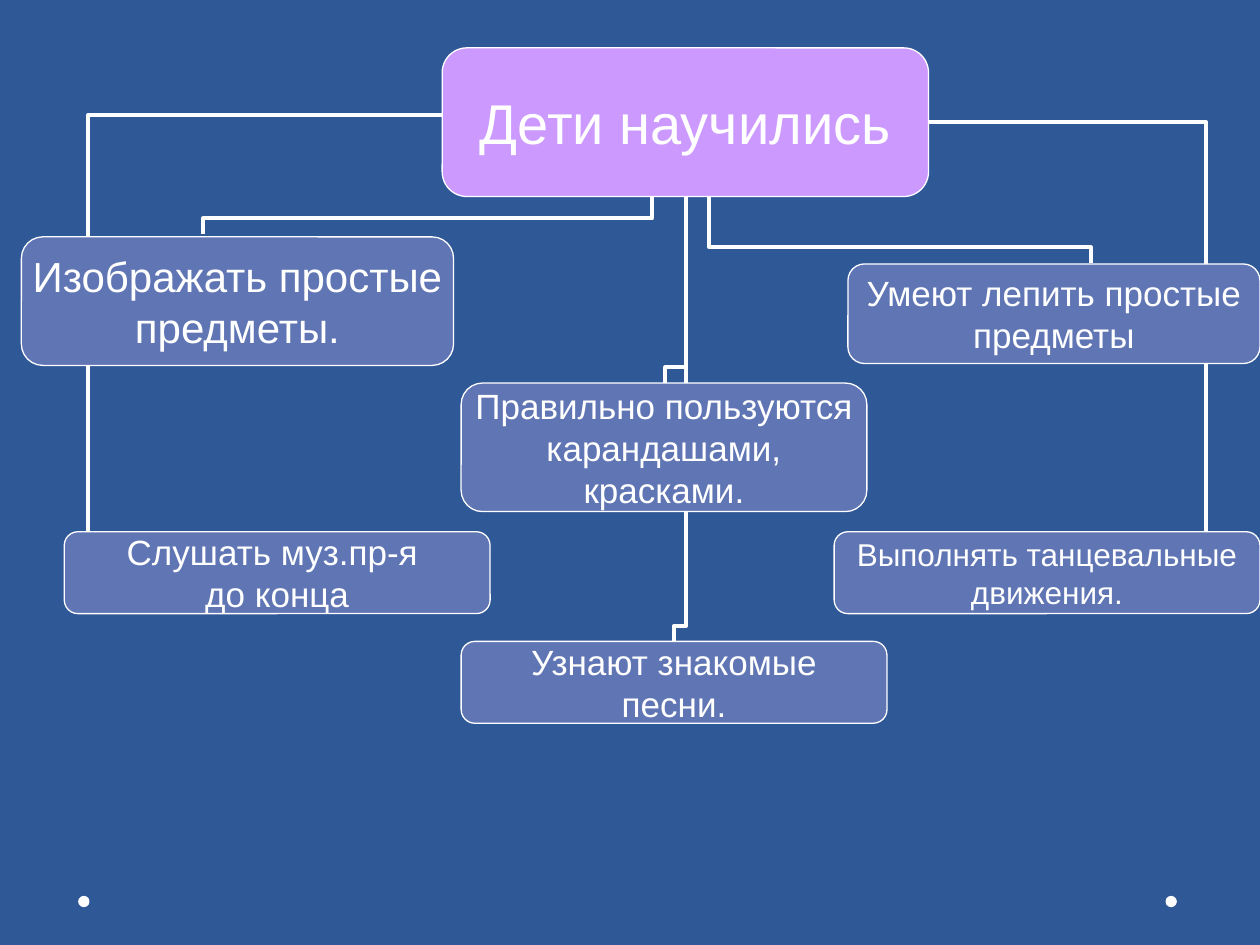
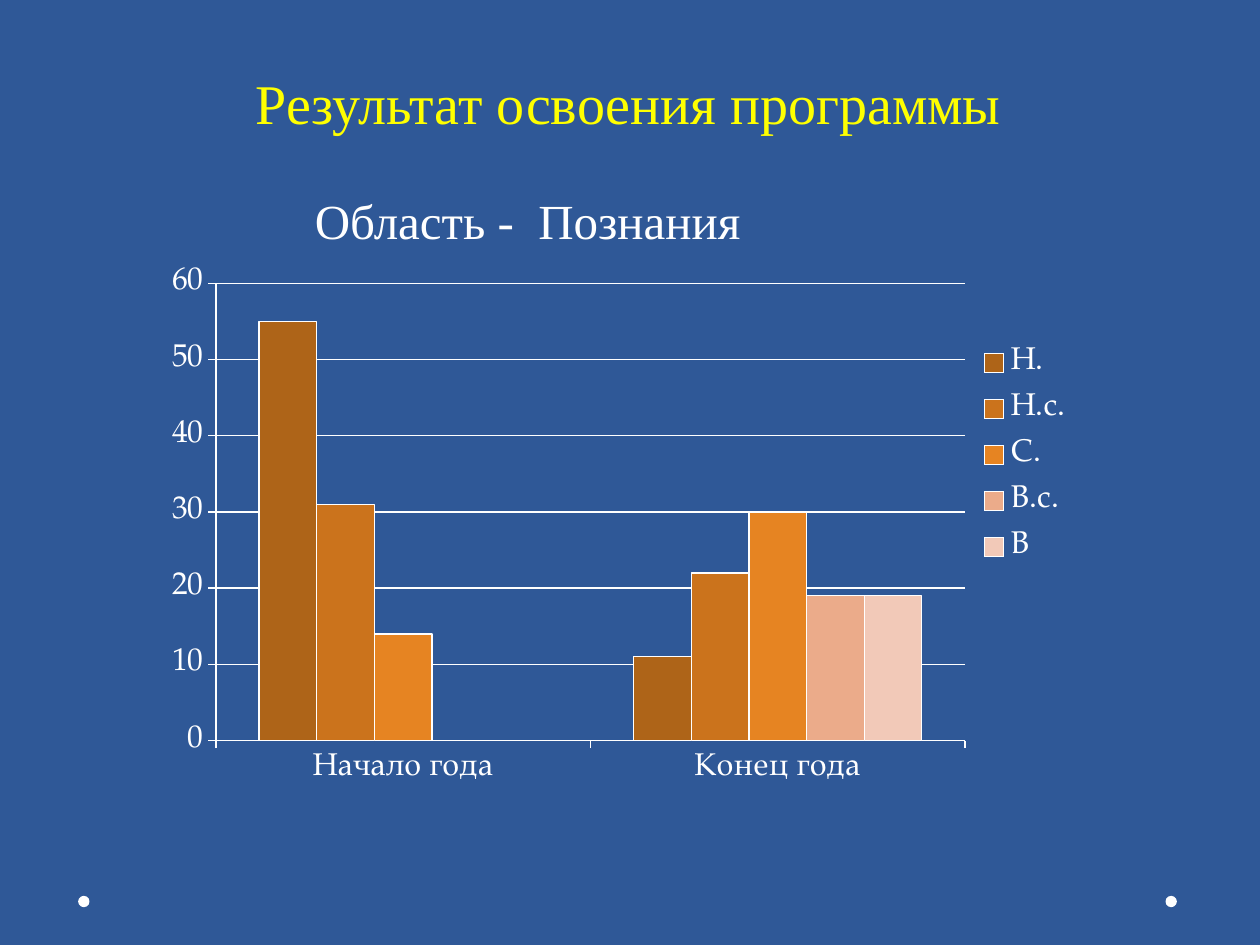
from dataclasses import dataclass

import lxml.etree
import pptx
import pptx.chart.data
import pptx.dml.color
import pptx.enum.chart
import pptx.enum.shapes
import pptx.enum.text
import pptx.oxml.ns
import pptx.util

# Shared look
COLOURS = {
    "background": "2F5897",
    "white": "FFFFFF",
    "title": "FFFF00",
    "root": "CC99FF",
    "skill": "6076B4",
}
SERIES_COLOURS = ["AE6418", "CB731C", "E68422", "EBAB8A", "F2C9B8"]
SANS, SERIF, CHART_FONT = "Arial", "Times New Roman", "TeX Gyre Pagella"

# Slide grid: 100 columns by 75 rows of square cells
WIDTH, HEIGHT = pptx.util.Inches(10), pptx.util.Inches(7.5)
COLUMNS, ROWS = 100, 75


@dataclass(frozen=True)
class Area:
    """Left, top, width and height in grid cells, or in shares of a chart."""
    left: float
    top: float
    width: float
    height: float

    def lengths(self) -> tuple[int, int, int, int]:
        return (across(self.left), down(self.top), across(self.width), down(self.height))


@dataclass(frozen=True)
class Box:
    area: Area
    lines: tuple[str, ...]
    size: int = 20
    colour: str = "skill"


@dataclass(frozen=True)
class Elbow:
    """A bent line to the root; bend is the share of its run before the turn."""
    start: tuple[float, float]
    end: tuple[float, float]
    bend: float | None
    upright: bool = True


BOXES = [
    Box(Area(35.1, 3.8, 38.6, 11.8), ("Дети научились",), 32, "root"),
    Box(Area(1.7, 18.8, 34.3, 10.2), ("Изображать простые", "предметы."), 24),
    Box(Area(36.6, 30.4, 32.2, 10.2), ("Правильно пользуются", "карандашами,", "красками.")),
    Box(Area(67.3, 20.95, 32.7, 7.9), ("Умеют лепить простые", "предметы")),
    Box(Area(5.1, 42.2, 33.8, 6.5), ("Слушать муз.пр-я ", "до конца")),
    Box(Area(36.6, 50.9, 33.8, 6.5), ("Узнают знакомые", "песни.")),
    Box(Area(66.2, 42.2, 33.8, 6.5), ("Выполнять танцевальные", "движения."), 18),
]
ELBOWS = [
    Elbow((95.7, 43), (73.7, 9.7), None),
    Elbow((53.5, 50.9), (54.45, 15.6), 0.035),
    Elbow((8.3, 44.9), (38.3, 9.1), -0.043, upright=False),
    Elbow((86.6, 20.9), (56.3, 5.2), 0.08),
    Elbow((52.8, 30.4), (54.45, 15.6), 0.084),
    Elbow((16.1, 18.6), (51.75, 15.4), 0.396),
]
CATEGORIES = ["Начало года", "Конец года"]
LEVELS = {"Н.": (55, 11), "Н.с.": (31, 22), "С.": (14, 30), "В.с.": (0, 19), "В": (0, 19)}


def across(columns: float) -> int:
    return round(WIDTH * columns / COLUMNS)


def down(rows: float) -> int:
    return round(HEIGHT * rows / ROWS)


def rgb(colour: str) -> pptx.dml.color.RGBColor:
    return pptx.dml.color.RGBColor.from_string(COLOURS.get(colour, colour))


def paint(target, colour: str) -> None:
    target.fill.solid()
    target.fill.fore_color.rgb = rgb(colour)


def draw_line(line, points: float) -> None:
    line.color.rgb = rgb("white")
    line.width = pptx.util.Pt(points)


def set_font(font, name: str, size: int, colour: str = "white") -> None:
    font.name, font.size = name, pptx.util.Pt(size)
    font.color.rgb = rgb(colour)


def write(shape, *lines: str, font: str = SANS, size: int = 20, colour: str = "white",
          centred: bool = False, middle: bool = False, wrap: bool = False) -> None:
    frame = shape.text_frame
    frame.word_wrap = wrap
    frame.auto_size = pptx.enum.text.MSO_AUTO_SIZE.NONE
    anchors = pptx.enum.text.MSO_ANCHOR
    frame.vertical_anchor = anchors.MIDDLE if middle else anchors.TOP
    alignments = pptx.enum.text.PP_ALIGN
    for number, line in enumerate(lines):
        paragraph = frame.paragraphs[0] if number == 0 else frame.add_paragraph()
        paragraph.alignment = alignments.CENTER if centred else alignments.LEFT
        run = paragraph.add_run()
        run.text = line
        set_font(run.font, font, size, colour)


def add_filled(slide, kind, area: Area, colour: str):
    shape = slide.shapes.add_shape(kind, *area.lengths())
    shape.shadow.inherit = False
    paint(shape, colour)
    return shape


def add_box(slide, box: Box) -> None:
    shape = add_filled(slide, pptx.enum.shapes.MSO_SHAPE.ROUNDED_RECTANGLE, box.area, box.colour)
    draw_line(shape.line, 0.75)
    write(shape, *box.lines, size=box.size, centred=True, middle=True)


def add_elbow(slide, elbow: Elbow) -> None:
    (x1, y1), (x2, y2) = elbow.start, elbow.end
    if elbow.upright:
        # Lay the line on its side about its centre; the quarter turn stands it up
        middle_x, middle_y = (x1 + x2) / 2, (y1 + y2) / 2
        half_run, half_rise = (y1 - y2) / 2, (x2 - x1) / 2
        x1, x2 = middle_x - half_run, middle_x + half_run
        y1, y2 = middle_y - half_rise, middle_y + half_rise
    connector = slide.shapes.add_connector(
        pptx.enum.shapes.MSO_CONNECTOR.ELBOW, across(x1), down(y1), across(x2), down(y2))
    draw_line(connector.line, 2.25)
    properties = connector._element.spPr
    qualified = pptx.oxml.ns.qn
    if elbow.upright:
        properties.find(qualified("a:xfrm")).set("rot", str(270 * 60000))
    geometry = properties.find(qualified("a:prstGeom"))
    if elbow.bend is None:
        geometry.set("prst", "bentConnector2")
    else:
        guide = lxml.etree.SubElement(geometry.find(qualified("a:avLst")), qualified("a:gd"))
        guide.set("name", "adj1")
        guide.set("fmla", f"val {round(elbow.bend * 100000)}")
    lxml.etree.SubElement(properties, qualified("a:effectLst"))


def style_master(presentation, slide) -> None:
    """Set the background and move the two corner dots to the master."""
    master = presentation.slide_master
    paint(master.background, "background")
    for left in (6.2, 92.5):
        dot = add_filled(slide, pptx.enum.shapes.MSO_SHAPE.OVAL, Area(left, 71.1, 0.9, 0.9), "white")
        dot.line.fill.background()
        master.shapes._spTree.append(dot._element)


def place_in_chart(element, position: int, area: Area, inner: bool = False) -> None:
    """Fix a chart part at shares of the chart's size."""
    qualified = pptx.oxml.ns.qn
    for automatic in element.findall(qualified("c:layout")):
        element.remove(automatic)
    layout = lxml.etree.Element(qualified("c:layout"))
    element.insert(position, layout)
    manual = lxml.etree.SubElement(layout, qualified("c:manualLayout"))
    settings = {"layoutTarget": "inner"} if inner else {}
    settings |= {"xMode": "edge", "yMode": "edge",
                 "x": area.left, "y": area.top, "w": area.width, "h": area.height}
    for name, value in settings.items():
        lxml.etree.SubElement(manual, qualified(f"c:{name}")).set("val", str(value))


def add_levels_chart(slide, area: Area) -> None:
    data = pptx.chart.data.CategoryChartData()
    data.categories = CATEGORIES
    for name, values in LEVELS.items():
        data.add_series(name, values)
    kind = pptx.enum.chart.XL_CHART_TYPE.COLUMN_CLUSTERED
    chart = slide.shapes.add_chart(kind, *area.lengths(), data).chart
    chart.has_title = False
    set_font(chart.font, CHART_FONT, 18)

    # Columns
    plot = chart.plots[0]
    plot.gap_width, plot.overlap, plot.vary_by_categories = 150, 0, False
    for series, colour in zip(plot.series, SERIES_COLOURS):
        paint(series.format, colour)
        draw_line(series.format.line, 0.75)

    # Axes and legend
    for axis in (chart.category_axis, chart.value_axis):
        axis.major_tick_mark = pptx.enum.chart.XL_TICK_MARK.OUTSIDE
        draw_line(axis.format.line, 0.75)
    values = chart.value_axis
    values.minimum_scale, values.maximum_scale, values.major_unit = 0, 60, 10
    values.has_major_gridlines = True
    draw_line(values.major_gridlines.format.line, 0.75)
    chart.has_legend = True
    chart.legend.position = pptx.enum.chart.XL_LEGEND_POSITION.RIGHT
    chart.legend.include_in_layout = False
    plot_area = chart._chartSpace.chart.plotArea
    place_in_chart(plot_area, 0, Area(0.066, 0.049, 0.795, 0.85), inner=True)
    place_in_chart(chart.legend._element, 1, Area(0.865, 0.14, 0.12, 0.455))


def build_skills_slide(slide) -> None:
    for elbow in ELBOWS:
        add_elbow(slide, elbow)
    for box in BOXES:
        add_box(slide, box)


def build_results_slide(slide) -> None:
    title = slide.shapes.title
    title.left, title.top, title.width, title.height = Area(19.3, 4.9, 61.7, 6.4).lengths()
    write(title, "Результат освоения программы", font=SERIF, size=32, colour="title")
    add_levels_chart(slide, Area(12.2, 20.4, 74.8, 42.7))
    subject = slide.shapes.add_textbox(*Area(24, 14.65, 46.5, 5.7).lengths())
    write(subject, "Область -  Познания", font=SERIF, size=28, wrap=True)


def main() -> None:
    presentation = pptx.Presentation()
    presentation.slide_width, presentation.slide_height = WIDTH, HEIGHT
    layouts = presentation.slide_layouts
    skills_slide = presentation.slides.add_slide(layouts.get_by_name("Blank"))
    results_slide = presentation.slides.add_slide(layouts.get_by_name("Title Only"))
    style_master(presentation, skills_slide)
    build_skills_slide(skills_slide)
    build_results_slide(results_slide)
    presentation.save("out.pptx")


if __name__ == "__main__":
    main()
